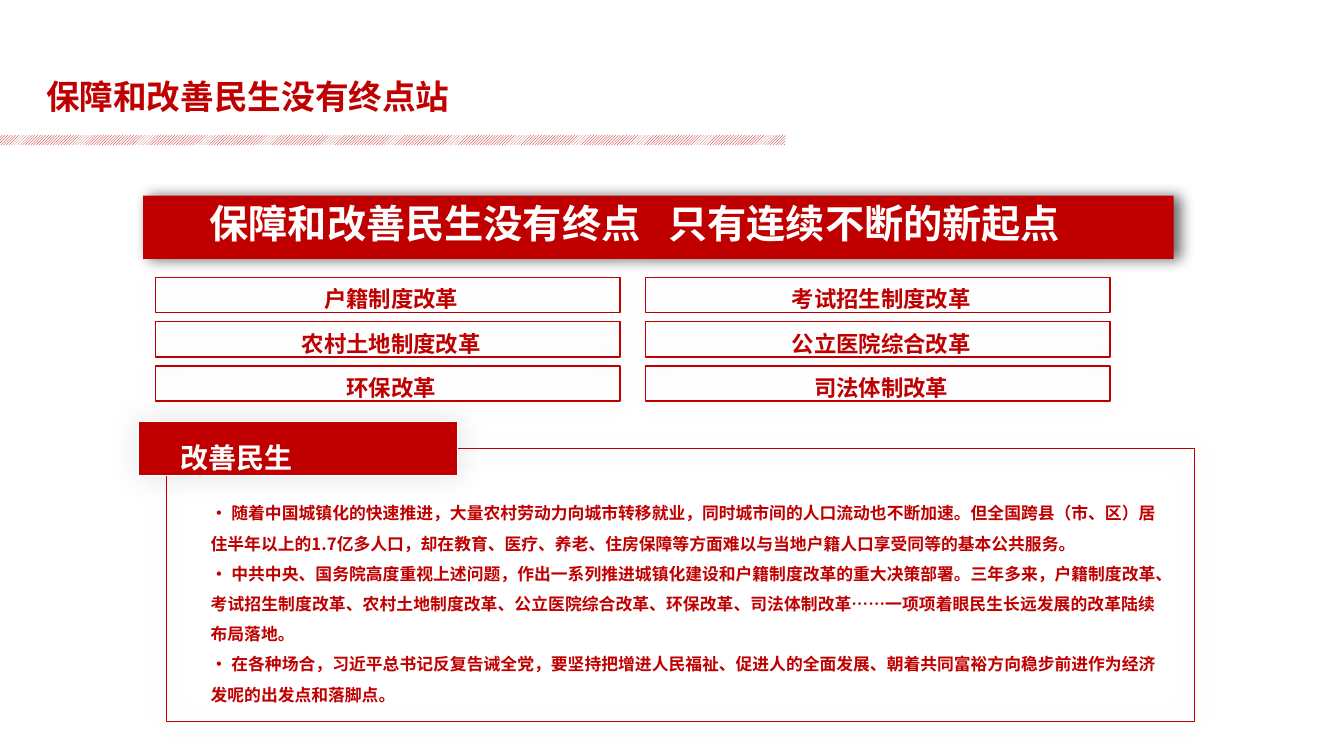
from dataclasses import dataclass
from typing import Any

from lxml import etree
from pptx import Presentation
from pptx import util as u
from pptx.dml import color
from pptx.enum import dml, shapes, text
from pptx.oxml import ns

FONT = "Noto Sans CJK SC"
RED, WHITE, BLACK = "C00000", "FFFFFF", "000000"


@dataclass(frozen=True)
class Box:
    left: float
    top: float
    width: float
    height: float

    def inches(self) -> list[int]:
        return [u.Inches(n) for n in (self.left, self.top, self.width, self.height)]


@dataclass(frozen=True)
class Shadow:
    opacity: int  # percent
    blur: float  # points
    distance: float = 0  # points


@dataclass(frozen=True)
class Style:
    size: float
    colour: str = RED
    align: text.PP_ALIGN = text.PP_ALIGN.LEFT
    spacing: float = 1.0
    side_inset: float = 0.13
    top_inset: float = 0.07
    tab: float = 0  # inches from the text edge


SOFT = Shadow(11, 22)


def rgb(value: str) -> color.RGBColor:
    return color.RGBColor.from_string(value)


def add_shadow(shape: Any, shadow: Shadow) -> None:
    effects = shape._element.spPr.find(ns.qn("a:effectLst"))
    outer = etree.SubElement(
        effects, ns.qn("a:outerShdw"), blurRad=str(u.Pt(shadow.blur)),
        dist=str(u.Pt(shadow.distance)), dir="0", algn="ctr", rotWithShape="0")
    tint = etree.SubElement(outer, ns.qn("a:srgbClr"), val=BLACK)
    etree.SubElement(tint, ns.qn("a:alpha"), val=str(shadow.opacity * 1000))


def add_rectangle(parent: Any, box: Box, fill: str | None = None,
                  line: str | None = None, shadow: Shadow | None = None) -> Any:
    shape = parent.add_shape(shapes.MSO_SHAPE.RECTANGLE, *box.inches())
    shape.shadow.inherit = False
    if fill:
        shape.fill.solid()
        shape.fill.fore_color.rgb = rgb(fill)
    else:
        shape.fill.background()
    if line:
        shape.line.color.rgb = rgb(line)
        shape.line.width = u.Pt(1)
    else:
        shape.line.fill.background()
    if shadow:
        add_shadow(shape, shadow)
    return shape


def add_text(parent: Any, box: Box, lines: list[str], style: Style) -> None:
    frame = parent.add_textbox(*box.inches()).text_frame
    frame.word_wrap = True
    frame.auto_size = text.MSO_AUTO_SIZE.SHAPE_TO_FIT_TEXT
    frame.margin_left = frame.margin_right = u.Inches(style.side_inset)
    frame.margin_top = frame.margin_bottom = u.Inches(style.top_inset)
    frame.text = "\n".join(lines)
    for paragraph in frame.paragraphs:
        paragraph.alignment = style.align
        paragraph.line_spacing = style.spacing
        properties = paragraph._p.get_or_add_pPr()
        if style.tab:
            tabs = etree.SubElement(properties, ns.qn("a:tabLst"))
            etree.SubElement(tabs, ns.qn("a:tab"),
                             pos=str(u.Inches(style.tab)), algn="l")
        font = paragraph.font
        font.size = u.Pt(style.size)
        font.bold = True
        font.color.rgb = rgb(style.colour)
        font.name = FONT
        # East Asian characters take their own typeface
        etree.SubElement(properties.find(ns.qn("a:defRPr")), ns.qn("a:ea"), typeface=FONT)


REFORMS = [
    ["户籍制度改革", "农村土地制度改革", "环保改革"],
    ["考试招生制度改革", "公立医院综合改革", "司法体制改革"],
]
DETAILS = [
    "· 随着中国城镇化的快速推进，大量农村劳动力向城市转移就业，同时城市间的人口流动也不断加速。"
    "但全国跨县（市、区）居住半年以上的1.7亿多人口，却在教育、医疗、养老、住房保障等方面"
    "难以与当地户籍人口享受同等的基本公共服务。",
    "· 中共中央、国务院高度重视上述问题，作出一系列推进城镇化建设和户籍制度改革的重大决策部署。"
    "三年多来，户籍制度改革、考试招生制度改革、农村土地制度改革、公立医院综合改革、环保改革、"
    "司法体制改革……一项项着眼民生长远发展的改革陆续布局落地。",
    "· 在各种场合，习近平总书记反复告诫全党，要坚持把增进人民福祉、促进人的全面发展、"
    "朝着共同富裕方向稳步前进作为经济发呢的出发点和落脚点。",
]


def main() -> None:
    presentation = Presentation()
    presentation.slide_width = u.Inches(13.33)
    presentation.slide_height = u.Inches(7.5)
    slide = presentation.slides.add_slide(presentation.slide_layouts[6])
    canvas = slide.shapes

    # Title over a hatched rule
    rule = add_rectangle(canvas, Box(-0.19, 1.34, 7.98, 0.1))
    rule.fill.patterned()
    rule.fill.pattern = dml.MSO_PATTERN.DARK_UPWARD_DIAGONAL
    rule.fill.fore_color.rgb = rgb(RED)
    rule.fill.back_color.rgb = rgb(WHITE)
    add_text(canvas, Box(0.36, 0.75, 6.03, 0.84), ["保障和改善民生没有终点站"],
             Style(24, spacing=0.9, side_inset=0.1, top_inset=0.05))

    # Banner
    add_rectangle(canvas, Box(1.42, 1.94, 10.22, 0.63), RED, shadow=Shadow(60, 10, 4))
    add_text(canvas, Box(1.95, 1.91, 9.16, 0.61),
             ["保障和改善民生没有终点\t只有连续不断的新起点"], Style(28, WHITE, tab=4.55))

    # Grid of reforms
    reform_style = Style(16, align=text.PP_ALIGN.CENTER, spacing=1.5)
    for column, names in enumerate(REFORMS):
        for row, name in enumerate(names):
            left, top = 1.54 + 4.86 * column, 2.75 + 0.44 * row
            add_text(canvas, Box(left + 0.11, top - 0.12, 4.46, 0.54), [name], reform_style)
            add_rectangle(canvas, Box(left, top, 4.61, 0.35), line=RED, shadow=SOFT)

    # Framed details
    add_text(canvas, Box(1.96, 4.82, 9.64, 2.22), DETAILS,
             Style(12, align=text.PP_ALIGN.JUSTIFY, spacing=1.5))
    add_rectangle(canvas, Box(1.65, 4.45, 10.2, 2.71), line=RED, shadow=SOFT)

    # Label on the frame
    label = canvas.add_group_shape().shapes
    add_rectangle(label, Box(1.37, 4.18, 3.17, 0.54), RED, WHITE, SOFT)
    add_text(label, Box(1.65, 4.13, 2.96, 0.58), ["改善民生"],
             Style(20, WHITE, spacing=1.5, side_inset=0.14))

    presentation.save("out.pptx")


if __name__ == "__main__":
    main()
